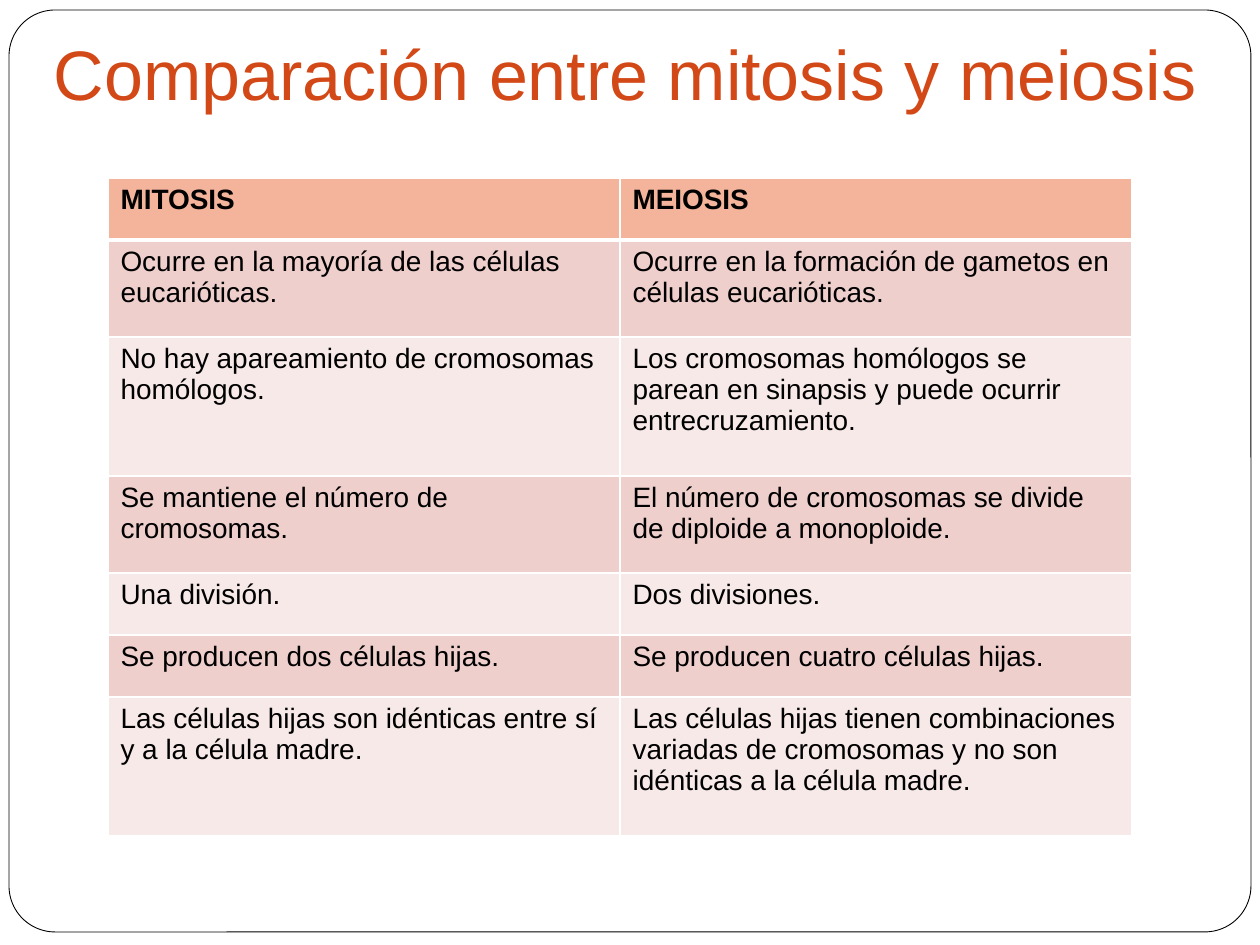
from dataclasses import dataclass

from lxml.etree import SubElement
from pptx import Presentation
from pptx.dml.color import RGBColor
from pptx.enum.shapes import MSO_SHAPE
from pptx.enum.text import MSO_ANCHOR, MSO_AUTO_SIZE, PP_ALIGN
from pptx.oxml.ns import qn
from pptx.util import Emu, Pt


@dataclass(frozen=True)
class Theme:
    font: str = "Arial"
    title_size: int = 40
    body_size: int = 16
    title: str = "D34817"
    ink: str = "000000"
    paper: str = "FFFFFF"
    header: str = "F4B39B"
    bands: tuple = ("EFCFCC", "F7E9E8")


THEME = Theme()


def px(length):
    """Turn pixels, 126 to the inch, into EMU."""
    return Emu(round(length * 914400 / 126))


def style(paragraph, size, color, bold=False):
    for run in paragraph.runs:
        run.font.name = THEME.font
        run.font.size = Pt(size)
        run.font.bold = bold
        run.font.color.rgb = RGBColor.from_string(color)


COMPARISON = [
    ("MITOSIS", "MEIOSIS"),
    ("Ocurre en la mayoría de las células eucarióticas.",
     "Ocurre en la formación de gametos en células eucarióticas."),
    ("No hay apareamiento de cromosomas homólogos.",
     "Los cromosomas homólogos se parean en sinapsis y puede ocurrir entrecruzamiento."),
    ("Se mantiene el número de cromosomas.",
     "El número de cromosomas se divide de diploide a monoploide."),
    ("Una división.", "Dos divisiones."),
    ("Se producen dos células hijas.", "Se producen cuatro células hijas."),
    ("Las células hijas son idénticas entre sí y a la célula madre.",
     "Las células hijas tienen combinaciones variadas de cromosomas y no son "
     "idénticas a la célula madre."),
]
ROW_HEIGHTS = [62, 97, 139, 97, 62, 62, 139]
COLUMN_WIDTH = 512

presentation = Presentation()
presentation.slide_width, presentation.slide_height = px(1260), px(945)
slide = presentation.slides.add_slide(presentation.slide_layouts[5])

# Rounded frame, placed behind the title
frame = slide.shapes.add_shape(MSO_SHAPE.ROUNDED_RECTANGLE, px(9), px(10), px(1242), px(922))
frame.adjustments[0] = 0.05
frame.shadow.inherit = False
frame.fill.solid()
frame.fill.fore_color.rgb = RGBColor.from_string(THEME.paper)
frame.line.color.rgb = RGBColor.from_string(THEME.ink)
frame.line.width = Pt(0.5)
slide.shapes._spTree.insert(2, frame._element)

# Title
title = slide.shapes.title
title.left, title.top, title.width, title.height = px(39), px(20), px(1172), px(107)
heading = title.text_frame
heading.text = "Comparación entre mitosis y meiosis"
heading.auto_size = MSO_AUTO_SIZE.NONE
heading.word_wrap = True
heading.vertical_anchor = MSO_ANCHOR.BOTTOM
heading.margin_left = heading.margin_right = heading.margin_bottom = Pt(7.2)
heading.margin_top = Pt(3.6)
heading.paragraphs[0].alignment = PP_ALIGN.CENTER
style(heading.paragraphs[0], THEME.title_size, THEME.title)

# Comparison table
table = slide.shapes.add_table(
    len(COMPARISON), 2, px(108), px(178), px(2 * COLUMN_WIDTH), px(sum(ROW_HEIGHTS))
).table
for column in table.columns:
    column.width = px(COLUMN_WIDTH)

for row, (texts, height) in enumerate(zip(COMPARISON, ROW_HEIGHTS)):
    table.rows[row].height = px(height)
    is_header = row == 0
    band = THEME.header if is_header else THEME.bands[(row - 1) % 2]
    # The rule under the header is thicker than the others
    borders = {"lnL": 1, "lnR": 1, "lnT": 3 if row == 1 else 1, "lnB": 3 if is_header else 1}
    for column, text in enumerate(texts):
        cell = table.cell(row, column)
        cell.text_frame.text = text
        style(cell.text_frame.paragraphs[0], THEME.body_size, THEME.ink, is_header)
        properties = cell._tc.get_or_add_tcPr()
        for side, width in borders.items():
            border = SubElement(properties, qn(f"a:{side}"), w=str(Pt(width)))
            border_fill = SubElement(border, qn("a:solidFill"))
            SubElement(border_fill, qn("a:srgbClr"), val=THEME.paper)
        cell.fill.solid()
        cell.fill.fore_color.rgb = RGBColor.from_string(band)

presentation.save("out.pptx")
